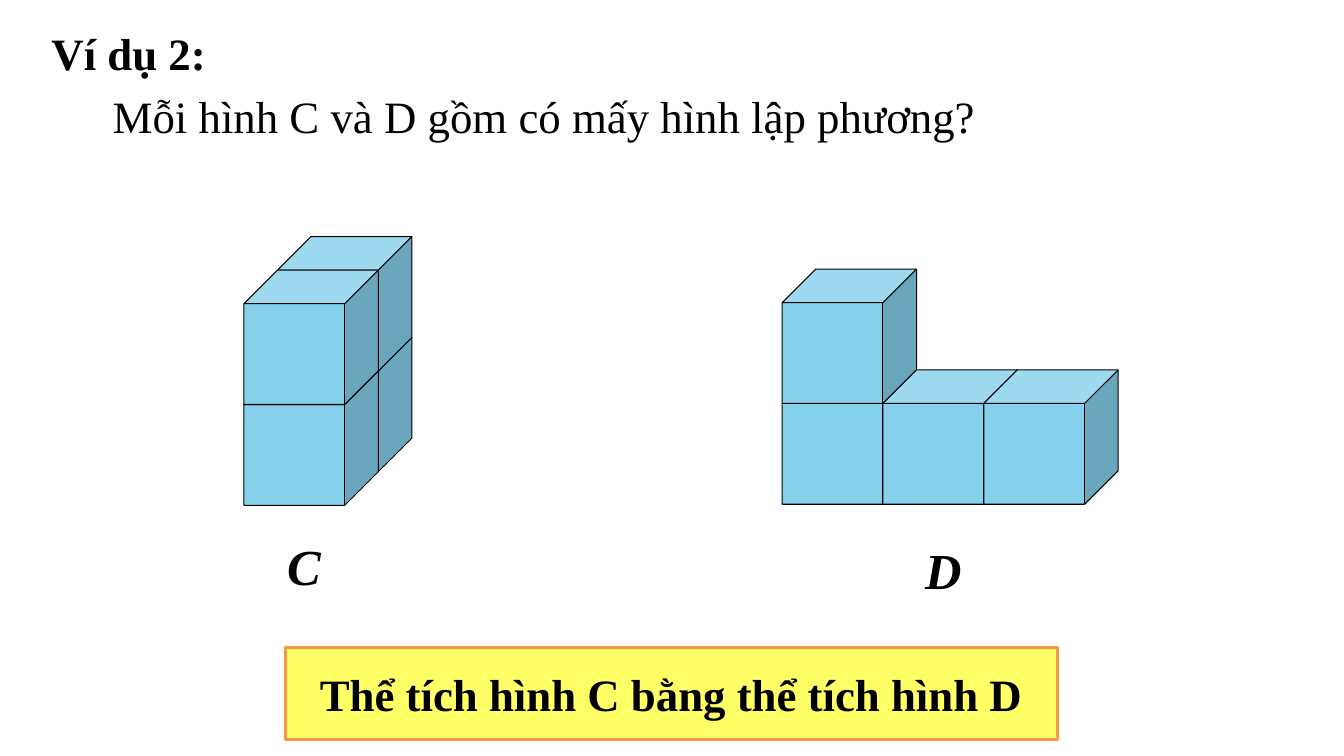
"""Build a slide comparing the volumes of two solids made of unit cubes."""
from dataclasses import dataclass

import pptx
import pptx.dml.color
import pptx.enum.shapes
import pptx.enum.text
import pptx.shapes.autoshape
import pptx.slide
import pptx.util

Color = pptx.dml.color.RGBColor
Kind = pptx.enum.shapes.MSO_SHAPE
Align = pptx.enum.text.PP_ALIGN
Anchor = pptx.enum.text.MSO_ANCHOR


@dataclass(frozen=True)
class Theme:
    """Colours, font and type sizes of the slide."""
    font: str = "Times New Roman"
    ink: Color = Color(0, 0, 0)
    cube: Color = Color(0x85, 0xD0, 0xEB)
    note: Color = Color(0xFF, 0xFF, 0x66)
    edge: Color = Color(0xF7, 0x96, 0x46)
    body: int = 32
    label: int = 36
    thin: float = 0.75
    thick: float = 2


@dataclass(frozen=True)
class Box:
    """A frame in percent of the slide's width and height."""
    left: float
    top: float
    width: float
    height: float


@dataclass(frozen=True)
class Label:
    """A line of text with its frame and format."""
    text: str
    box: Box
    size: int
    bold: bool = True
    italic: bool = False


@dataclass(frozen=True)
class Solid:
    """A stack of cubes, each given as column, level and depth, back to front."""
    left: float
    top: float
    cells: tuple[tuple[int, int, int], ...]


THEME = Theme()
WIDTH = pptx.util.Inches(13.33)
HEIGHT = pptx.util.Inches(7.5)
SIDE = WIDTH // 10
STEP = SIDE * 3 // 4
DEPTH = SIDE - STEP

TITLE = Label("Ví dụ 2:", Box(3.08, 2.8, 76.9, 8.53), THEME.body)
LABELS = (
    Label("Mỗi hình C và D gồm có mấy hình lập phương?",
          Box(7.65, 11.07, 76.9, 8.53), THEME.body, bold=False),
    Label("C", Box(20.63, 70.13, 4.2, 9.33), THEME.label, italic=True),
    Label("D", Box(68.1, 70.67, 4.2, 9.33), THEME.label, italic=True),
)
ANSWER = Label("Thể tích hình C bằng thể tích hình D",
               Box(21.23, 85.6, 57.45, 12.27), THEME.body)
SOLIDS = (
    Solid(18.15, 49.07, ((0, 0, 1), (0, 0, 0), (0, 1, 1), (0, 1, 0))),
    Solid(58.2, 48.93, ((0, 0, 0), (0, 1, 0), (1, 0, 0), (2, 0, 0))),
)


def frame(box: Box) -> tuple[int, int, int, int]:
    """Turn percentages into slide lengths."""
    return (int(WIDTH * box.left / 100), int(HEIGHT * box.top / 100),
            int(WIDTH * box.width / 100), int(HEIGHT * box.height / 100))


def write(shape: pptx.shapes.autoshape.Shape, label: Label,
          align: Align = Align.LEFT, anchor: Anchor = Anchor.TOP) -> None:
    """Put a formatted label into a shape."""
    text = shape.text_frame
    text.text = label.text
    style = {"word_wrap": True, "vertical_anchor": anchor,
             "auto_size": pptx.enum.text.MSO_AUTO_SIZE.NONE}
    for name, value in style.items():
        setattr(text, name, value)
    line = text.paragraphs[0]
    line.alignment = align
    font = line.runs[0].font
    looks = {"name": THEME.font, "size": pptx.util.Pt(label.size),
             "bold": label.bold, "italic": label.italic}
    for name, value in looks.items():
        setattr(font, name, value)
    font.color.rgb = THEME.ink


def paint(shape: pptx.shapes.autoshape.Shape, fill: Color,
          edge: Color, weight: float) -> None:
    """Set the fill and outline of a shape."""
    shape.shadow.inherit = False
    shape.fill.solid()
    shape.fill.fore_color.rgb = fill
    shape.line.color.rgb = edge
    shape.line.width = pptx.util.Pt(weight)


def stack(slide: pptx.slide.Slide, solid: Solid) -> None:
    """Draw the cubes of a solid."""
    left, top, _, _ = frame(Box(solid.left, solid.top, 0, 0))
    for col, level, depth in solid.cells:
        cube = slide.shapes.add_shape(
            Kind.CUBE, left + col * STEP + depth * DEPTH,
            top - level * STEP - depth * DEPTH, SIDE, SIDE)
        paint(cube, THEME.cube, THEME.ink, THEME.thin)


def main() -> None:
    """Build and save the slide."""
    deck = pptx.Presentation()
    deck.slide_width, deck.slide_height = WIDTH, HEIGHT
    slide = deck.slides.add_slide(deck.slide_layouts[5])
    title = slide.shapes.title
    for name, value in zip(("left", "top", "width", "height"), frame(TITLE.box)):
        setattr(title, name, value)
    write(title, TITLE)
    for solid in SOLIDS:
        stack(slide, solid)
    for label in LABELS:
        write(slide.shapes.add_textbox(*frame(label.box)), label)
    answer = slide.shapes.add_shape(Kind.RECTANGLE, *frame(ANSWER.box))
    paint(answer, THEME.note, THEME.edge, THEME.thick)
    write(answer, ANSWER, Align.CENTER, Anchor.MIDDLE)
    deck.save("out.pptx")


if __name__ == "__main__":
    main()
